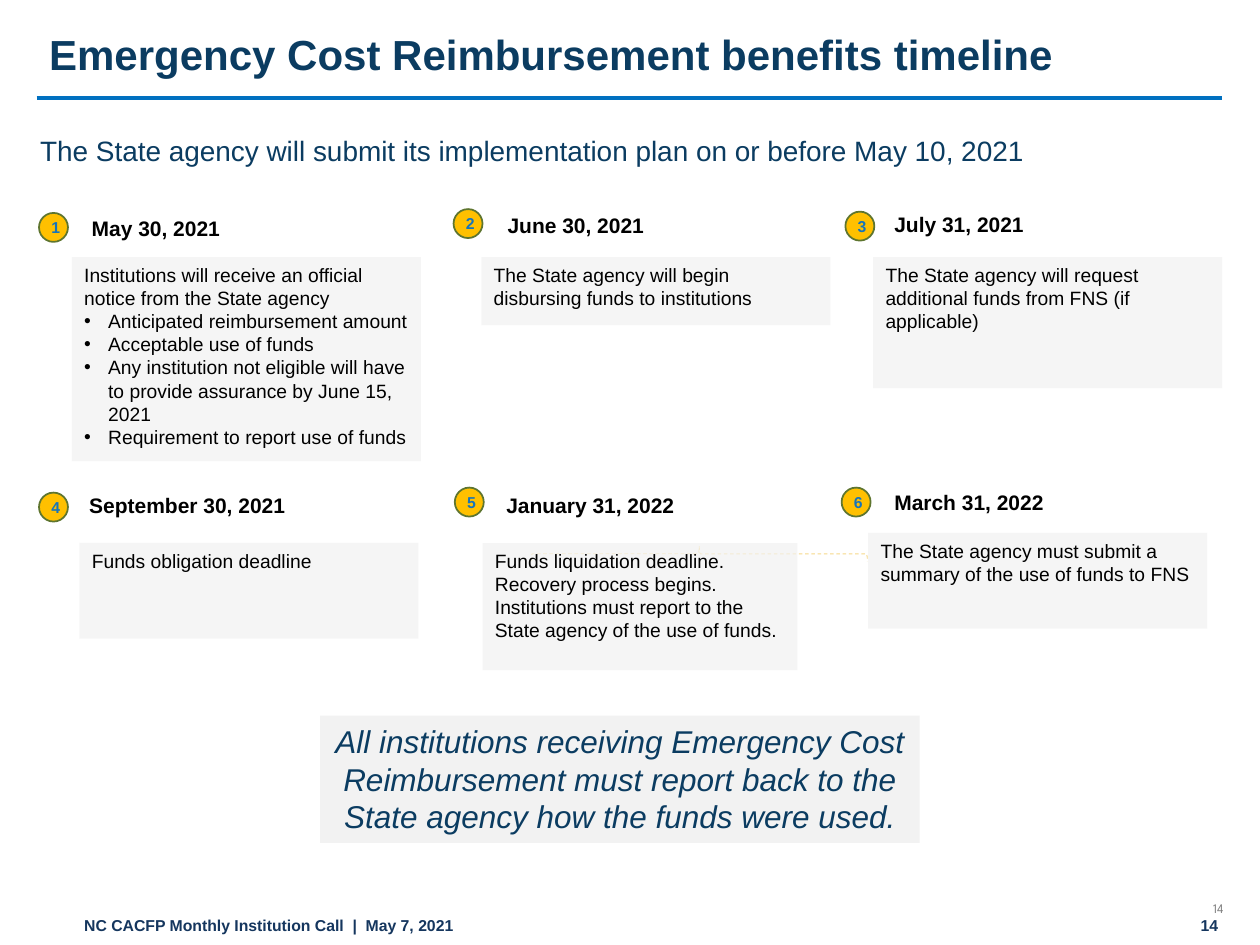
import dataclasses
import typing

import pptx
import pptx.dml.color
import pptx.enum.dml
import pptx.enum.shapes
import pptx.enum.text
import pptx.oxml
import pptx.oxml.ns
import pptx.util

Inches = pptx.util.Inches
Pt = pptx.util.Pt
SHAPES = pptx.enum.shapes.MSO_SHAPE
ALIGN = pptx.enum.text.PP_ALIGN
ANCHOR = pptx.enum.text.MSO_ANCHOR

NAVY, FOOTER_NAVY, BLACK, PALE = "0B3C61", "15365E", "000000", "F2F2F2"
BADGE_SIZE = 0.23
BULLET_INDENT = 0.19
BULLET = "• "

Box = tuple[float, float, float, float]


@dataclasses.dataclass(frozen=True)
class Style:
    size: float
    color: str
    bold: bool = False
    italic: bool = False
    name: str = "Arial"


@dataclasses.dataclass(frozen=True)
class Milestone:
    date: str
    badge: tuple[float, float]
    heading: Box
    panel: Box
    details: tuple[str, ...]


FOOTER = Style(9, FOOTER_NAVY, bold=True)
HEADING = Style(12, BLACK, bold=True)
DETAIL = Style(11, BLACK)
BADGE = Style(9, "1574BB", bold=True)

MILESTONES = [
    Milestone("May 30, 2021", (0.31, 1.69), (0.63, 1.66, 2.67, 0.3), (0.57, 2.04, 2.77, 1.62), (
        "Institutions will receive an official notice from the State agency",
        "• Anticipated reimbursement amount",
        "• Acceptable use of funds",
        "• Any institution not eligible will have to provide assurance by June 15, 2021",
        "• Requirement to report use of funds")),
    Milestone("June 30, 2021", (3.6, 1.66), (3.93, 1.64, 1.29, 0.3), (3.82, 2.04, 2.77, 0.54), (
        "The State agency will begin disbursing funds to institutions",)),
    Milestone("July 31, 2021", (6.71, 1.68), (7, 1.63, 1.24, 0.3), (6.93, 2.04, 2.77, 1.04), (
        "The State agency will request additional funds from FNS (if applicable)",)),
    Milestone("September 30, 2021", (0.31, 3.91), (0.61, 3.86, 2.69, 0.3), (0.63, 4.31, 2.69, 0.76), (
        "Funds obligation deadline",)),
    Milestone("January 31, 2022", (3.61, 3.87), (3.92, 3.86, 1.56, 0.3), (3.83, 4.31, 2.5, 1.01), (
        "Funds liquidation deadline.",
        "Recovery process begins.",
        "Institutions must report to the State agency of the use of funds.")),
    Milestone("March 31, 2022", (6.68, 3.87), (7, 3.84, 1.74, 0.3), (6.89, 4.23, 2.69, 0.76), (
        "The State agency must submit a summary of the use of funds to FNS",)),
]


def rgb(color: str) -> pptx.dml.color.RGBColor:
    return pptx.dml.color.RGBColor.from_string(color)


def lengths(box: Box) -> list[int]:
    return [Inches(value) for value in box]


def add_bullet(paragraph: typing.Any) -> None:
    properties = paragraph._p.get_or_add_pPr()
    properties.set("marL", str(Inches(BULLET_INDENT)))
    properties.set("indent", str(-Inches(BULLET_INDENT)))
    namespace = pptx.oxml.ns.nsdecls("a")
    for xml in (f'<a:buFont {namespace} typeface="Arial"/>', f'<a:buChar {namespace} char="•"/>'):
        properties.append(pptx.oxml.parse_xml(xml))


def write(shape: typing.Any, lines: typing.Sequence[str], style: Style,
          align: typing.Any = ALIGN.LEFT, anchor: typing.Any = ANCHOR.TOP) -> None:
    """Fill a shape with styled paragraphs; a leading bullet makes a list item."""
    frame = shape.text_frame
    settings = {"word_wrap": True, "vertical_anchor": anchor,
                "auto_size": pptx.enum.text.MSO_AUTO_SIZE.NONE}
    for key, value in settings.items():
        setattr(frame, key, value)
    font_values = {"size": Pt(style.size), "name": style.name,
                   "bold": style.bold, "italic": style.italic}
    for index, line in enumerate(lines):
        paragraph = frame.add_paragraph() if index else frame.paragraphs[0]
        paragraph.alignment = align
        if line.startswith(BULLET):
            add_bullet(paragraph)
        run = paragraph.add_run()
        run.text = line.removeprefix(BULLET)
        for key, value in font_values.items():
            setattr(run.font, key, value)
        run.font.color.rgb = rgb(style.color)


def add_label(slide: typing.Any, box: Box, text: str, style: Style, **layout: typing.Any) -> typing.Any:
    label = slide.shapes.add_textbox(*lengths(box))
    write(label, [text], style, **layout)
    return label


def add_figure(slide: typing.Any, kind: typing.Any, box: Box, fill: str | None = None,
               line: tuple[str, float] | None = None, opacity: int = 100) -> typing.Any:
    figure = slide.shapes.add_shape(kind, *lengths(box))
    figure.shadow.inherit = False
    if fill:
        figure.fill.solid()
        figure.fill.fore_color.rgb = rgb(fill)
        if opacity < 100:
            color = figure.fill._xPr.find(".//" + pptx.oxml.ns.qn("a:srgbClr"))
            color.append(pptx.oxml.parse_xml(
                f'<a:alpha {pptx.oxml.ns.nsdecls("a")} val="{opacity * 1000}"/>'))
    else:
        figure.fill.background()
    if line:
        figure.line.color.rgb = rgb(line[0])
        figure.line.width = Pt(line[1])
    else:
        figure.line.fill.background()
    return figure


def add_title_rule(slide: typing.Any) -> None:
    rule = slide.shapes.add_connector(pptx.enum.shapes.MSO_CONNECTOR.STRAIGHT,
                                      *lengths((0.29, 0.78, 9.7, 0.78)))
    rule.line.color.rgb = rgb("0070C0")
    rule.line.width = Pt(2.25)
    rule._element.spPr.append(pptx.oxml.parse_xml(f'<a:effectLst {pptx.oxml.ns.nsdecls("a")}/>'))


def add_footer(slide: typing.Any) -> None:
    add_label(slide, (0.57, 7.22, 8.74, 0.29), "NC CACFP Monthly Institution Call  |  May 7, 2021", FOOTER)
    add_label(slide, (9.43, 7.22, 0.44, 0.3), "14", FOOTER)
    small_number = add_label(slide, (9.5, 7.14, 0.34, 0.13), "14",
                             Style(7.5, "808080", name="League Spartan"),
                             align=ALIGN.CENTER, anchor=ANCHOR.MIDDLE)
    for side in ("left", "top", "right", "bottom"):
        setattr(small_number.text_frame, f"margin_{side}", 0)


def add_title(slide: typing.Any) -> None:
    title = slide.shapes.title
    for key, value in zip(("left", "top", "width", "height"), lengths((0.29, 0.13, 9.43, 0.65))):
        setattr(title, key, value)
    write(title, ["Emergency Cost Reimbursement benefits timeline"],
          Style(24, NAVY, bold=True), anchor=ANCHOR.MIDDLE)
    title.text_frame.paragraphs[0].line_spacing = 0.9


def add_milestone(slide: typing.Any, number: int, milestone: Milestone) -> None:
    panel = add_figure(slide, SHAPES.RECTANGLE, milestone.panel, PALE, opacity=70)
    write(panel, milestone.details, DETAIL)
    add_label(slide, milestone.heading, milestone.date, HEADING)
    badge = add_figure(slide, SHAPES.OVAL, (*milestone.badge, BADGE_SIZE, BADGE_SIZE),
                       "FFC000", ("5E752F", 1))
    write(badge, [str(number)], BADGE, ALIGN.CENTER, ANCHOR.MIDDLE)


def main() -> None:
    deck = pptx.Presentation()
    deck.slide_width, deck.slide_height = Inches(10), Inches(7.5)
    slide = deck.slides.add_slide(deck.slide_layouts.get_by_name("Title Only"))

    add_footer(slide)
    add_title_rule(slide)
    add_title(slide)
    add_label(slide, (0.22, 1.01, 9.4, 0.37),
              "The State agency will submit its implementation plan on or before May 10, 2021",
              Style(16, NAVY))

    brace = add_figure(slide, SHAPES.RIGHT_BRACE, (5.49, 3.06, 0.12, 2.67), line=("F6D888", 0.5))
    brace.rotation = 270
    brace.line.dash_style = pptx.enum.dml.MSO_LINE.DASH

    for number, milestone in enumerate(MILESTONES, start=1):
        add_milestone(slide, number, milestone)

    reminder = add_figure(slide, SHAPES.RECTANGLE, (2.54, 5.68, 4.76, 1.01), PALE)
    write(reminder, ["All institutions receiving Emergency Cost Reimbursement must report back "
                     "to the State agency how the funds were used."],
          Style(18, NAVY, italic=True), ALIGN.CENTER)

    deck.save("out.pptx")


if __name__ == "__main__":
    main()
